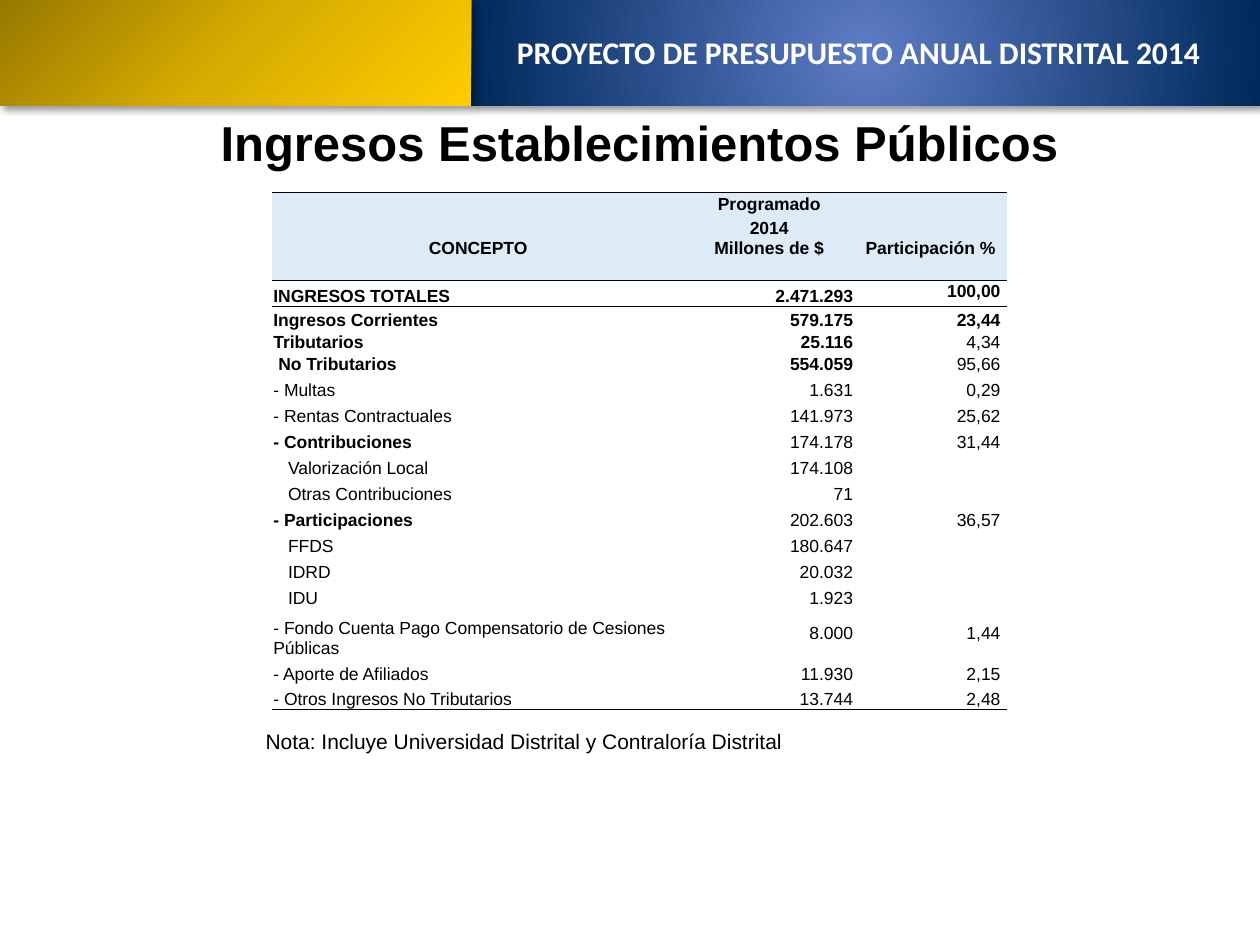
from dataclasses import dataclass

from lxml.etree import SubElement
from pptx import Presentation
from pptx.dml.color import RGBColor
from pptx.enum.shapes import MSO_SHAPE
from pptx.enum.text import MSO_ANCHOR, MSO_AUTO_SIZE, PP_ALIGN
from pptx.oxml import parse_xml
from pptx.oxml.ns import qn
from pptx.util import Inches, Pt

NS = 'xmlns:a="http://schemas.openxmlformats.org/drawingml/2006/main"'
LEFT, MID, RIGHT = PP_ALIGN.LEFT, PP_ALIGN.CENTER, PP_ALIGN.RIGHT
TOP, HALF, BASE = MSO_ANCHOR.TOP, MSO_ANCHOR.MIDDLE, MSO_ANCHOR.BOTTOM


@dataclass(frozen=True)
class Theme:
    """Colours, fonts and type sizes of the deck."""
    ink: str = "000000"
    white: str = "FFFFFF"
    head: str = "DDEBF7"
    blue: tuple = ((0, "5E7CC5"), (100, "00295C"))
    gold: tuple = ((0, "977900"), (50, "D7AC00"), (100, "FFCC00"))
    sans: str = "Arial"
    band: str = "Calibri"
    title: int = 28
    label: int = 18
    note: int = 12
    cell: int = 10
    rule: float = 0.5
    plain: str = "{2D5ABB26-0587-4C30-8999-92F81FD0307C}"


class Deck:
    """Draws on one slide with a grid of 100 columns and 75 rows."""

    def __init__(self, theme):
        """Open a deck with one blank slide."""
        self.theme = theme
        self.file = Presentation()
        self.file.slide_width, self.file.slide_height = Inches(10), Inches(7.5)
        self.slide = self.file.slides.add_slide(self.file.slide_layouts[6])

    def grid(self, *units):
        """Turn grid units into lengths."""
        return [int(self.file.slide_width * u / 100) for u in units]

    def run(self, para, text, size, font=None, bold=False, color=None):
        """Add one run to a paragraph."""
        run = para.add_run()
        run.text = text
        run.font.size, run.font.bold = Pt(size), bold
        run.font.name = font or self.theme.sans
        run.font.color.rgb = RGBColor.from_string(color or self.theme.ink)

    def panel(self, box, stops, focus):
        """Add a rectangle with a radial gradient and a soft shadow."""
        shape = self.slide.shapes.add_shape(MSO_SHAPE.RECTANGLE, *self.grid(*box))
        shape.line.fill.background()
        shape.shadow.inherit = False
        props = shape.element.spPr
        marks = "".join(f'<a:gs pos="{pos * 1000}"><a:srgbClr val="{tone}"/></a:gs>'
                        for pos, tone in stops)
        rect = " ".join(f'{side}="{part * 1000}"' for side, part in zip("ltrb", focus))
        props.insert(2, parse_xml(
            f'<a:gradFill {NS} rotWithShape="1"><a:gsLst>{marks}</a:gsLst>'
            f'<a:path path="circle"><a:fillToRect {rect}/></a:path></a:gradFill>'))
        props.find(qn("a:effectLst")).append(parse_xml(
            f'<a:outerShdw {NS} blurRad="{Pt(4)}" dist="{Pt(3)}" dir="{45 * 60000}" '
            f'algn="tl" rotWithShape="0"><a:srgbClr val="{self.theme.ink}">'
            '<a:alpha val="40000"/></a:srgbClr></a:outerShdw>'))

    def text(self, box, words, size, align=LEFT, grow=True, **style):
        """Add a text box with one paragraph."""
        frame = self.slide.shapes.add_textbox(*self.grid(*box)).text_frame
        frame.word_wrap = True
        frame.auto_size = MSO_AUTO_SIZE.SHAPE_TO_FIT_TEXT if grow else MSO_AUTO_SIZE.NONE
        frame.paragraphs[0].alignment = align
        self.run(frame.paragraphs[0], words, size, **style)

    def table(self, box, cols, rows):
        """Add an unstyled table with the given widths and row heights."""
        table = self.slide.shapes.add_table(len(rows), len(cols), *self.grid(*box)).table
        table.first_row = table.horz_banding = False
        table._tbl.tblPr.find(qn("a:tableStyleId")).text = self.theme.plain
        for col, wide in zip(table.columns, self.grid(*cols)):
            col.width = wide
        for row, high in zip(table.rows, rows):
            row.height = Pt(high)
        return table

    def cell(self, cell, lines, align, bold=False, fill=None, anchor=BASE, pads=(0, 0)):
        """Fill one table cell, with pads as extra left and right grid units."""
        cell.margin_left, cell.margin_right = self.grid(0.1 + pads[0], 0.1 + pads[1])
        cell.margin_top, cell.margin_bottom = Inches(0.01), 0
        cell.vertical_anchor = anchor
        if fill:
            cell.fill.solid()
            cell.fill.fore_color.rgb = RGBColor.from_string(fill)
        else:
            cell.fill.background()
        frame = cell.text_frame
        for i, line in enumerate(lines or [""]):
            para = frame.add_paragraph() if i else frame.paragraphs[0]
            para.alignment = align
            if line:
                self.run(para, line, self.theme.cell, bold=bold)
            else:
                SubElement(para._p, qn("a:endParaRPr"), sz=str(self.theme.cell * 100))

    def rule(self, row, side):
        """Draw a thin border along one side of a table row."""
        for cell in row.cells:
            cell._tc.get_or_add_tcPr().insert(0, parse_xml(
                f'<a:ln{side} {NS} w="{Pt(self.theme.rule)}"><a:solidFill>'
                f'<a:srgbClr val="{self.theme.ink}"/></a:solidFill></a:ln{side}>'))


HEADS = [
    ([], ["Programado"], []),
    (["CONCEPTO"], ["2014", "Millones de $"], ["Participación %"]),
    ([], [], []),
]
ITEMS = [
    ("INGRESOS TOTALES", "2.471.293", "100,00", "bbb", 0),
    ("Ingresos Corrientes", "579.175", "23,44", "bbb", 0),
    ("Tributarios", "25.116", "4,34", "bb-", 0),
    ("No Tributarios", "554.059", "95,66", "bb-", 0.4),
    ("- Multas", "1.631", "0,29", "---", 0),
    ("- Rentas Contractuales", "141.973", "25,62", "---", 0),
    ("- Contribuciones", "174.178", "31,44", "b--", 0),
    ("Valorización Local", "174.108", "", "---", 1.16),
    ("Otras Contribuciones", "71", "", "---", 1.16),
    ("- Participaciones", "202.603", "36,57", "b--", 0),
    ("FFDS", "180.647", "", "---", 1.16),
    ("IDRD", "20.032", "", "---", 1.16),
    ("IDU", "1.923", "", "---", 1.16),
    ("- Fondo Cuenta Pago Compensatorio de Cesiones Públicas", "8.000", "1,44", "---", 0),
    ("- Aporte de Afiliados", "11.930", "2,15", "---", 0),
    ("- Otros Ingresos No Tributarios", "13.744", "2,48", "---", 0),
]
ROWS = [12.6, 23.4, 12.6, 14.85, 13.7, 12.6, 12.6] + [14.85] * 9 + [28.4] + [14.85] * 2


def main():
    """Build the slide and save it."""
    theme = Theme()
    deck = Deck(theme)
    deck.panel((37.4, 0, 62.6, 8.4), theme.blue, (50, 50, 50, 50))
    deck.panel((0, 0, 37.4, 8.4), theme.gold, (0, 0, 100, 100))
    deck.text((10.6, 8.4, 80.3, 5.7), "Ingresos Establecimientos Públicos",
              theme.title, MID, bold=True)
    deck.text((39, 2.1, 58.3, 4.6), "PROYECTO DE PRESUPUESTO ANUAL DISTRITAL 2014",
              theme.label, MID, grow=False, font=theme.band, bold=True, color=theme.white)

    table = deck.table((21.6, 15.25, 58.3, 40.8), (32.7, 13.5, 12.1), ROWS)
    for r, heads in enumerate(HEADS):
        for c, lines in enumerate(heads):
            deck.cell(table.cell(r, c), lines, MID, True, theme.head)
    for r, (name, value, share, bold, indent) in enumerate(ITEMS, len(HEADS)):
        first = r == len(HEADS)
        mid = HALF if ROWS[r] > 20 else BASE
        looks = [
            (name, LEFT, theme.white, BASE, (indent, 0)),
            (value, RIGHT, theme.white, mid, (0, 0)),
            (share, RIGHT, theme.white if first else None, TOP if first else mid, (0, 0.4)),
        ]
        for c, (text, align, fill, anchor, pads) in enumerate(looks):
            deck.cell(table.cell(r, c), [text], align, bold[c] == "b", fill, anchor, pads)
    for r, side in ((0, "T"), (2, "B"), (3, "T"), (len(ROWS) - 1, "B")):
        deck.rule(table.rows[r], side)

    deck.text((20.1, 57.3, 50.4, 3),
              "Nota: Incluye Universidad Distrital y Contraloría Distrital", theme.note)
    deck.file.save("out.pptx")


if __name__ == "__main__":
    main()
